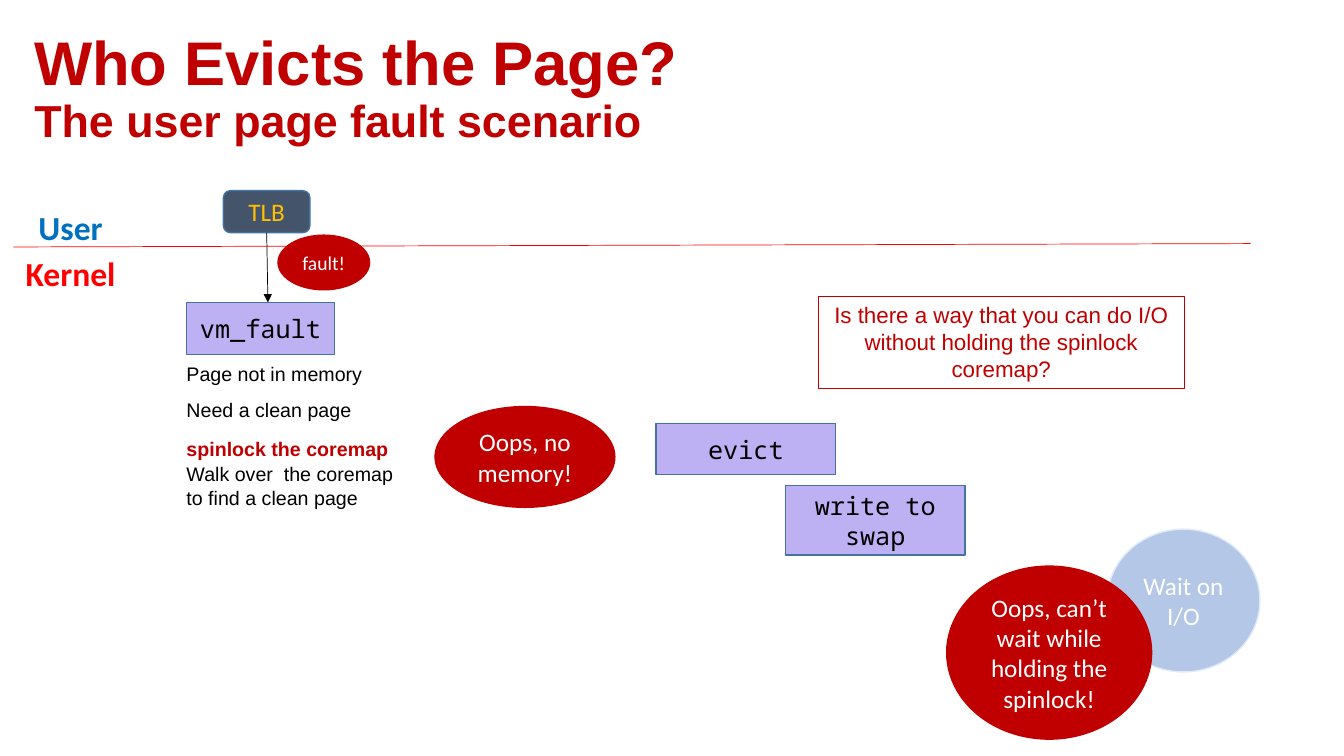
from dataclasses import dataclass, replace
from typing import Optional

from lxml.etree import SubElement
from pptx import Presentation
from pptx.dml.color import RGBColor
from pptx.enum.shapes import MSO_CONNECTOR, MSO_SHAPE
from pptx.enum.text import MSO_ANCHOR, PP_ALIGN
from pptx.oxml.ns import qn
from pptx.util import Emu, Inches, Pt

# Grid: 160 columns by 90 rows of square cells, 12 to the inch
COLS, ROWS, CELL = 160, 90, 76200

INK = {
    "red": "C00000", "bright": "FF0000", "blue": "0070C0", "black": "000000",
    "white": "FFFFFF", "lilac": "BEB1F3", "edge": "43739E", "slate": "44546A",
    "gold": "FFC000", "sky": "B4C7E7", "pale": "DEEBF7",
}


@dataclass(frozen=True)
class Look:
    font: str
    size: float
    color: str
    bold: bool = False
    form: Optional[MSO_SHAPE] = None
    fill: Optional[str] = None
    line: Optional[str] = None
    width: float = 1
    inset: float = 0.1
    align: PP_ALIGN = PP_ALIGN.CENTER
    anchor: MSO_ANCHOR = MSO_ANCHOR.MIDDLE


@dataclass(frozen=True)
class Box:
    text: str
    col: float
    row: float
    wide: float
    high: float
    look: Look


HEAD = Look("Arial", 44, "red", True, align=PP_ALIGN.LEFT)
MODE = Look("Calibri", 24, "blue", True, anchor=MSO_ANCHOR.TOP)
NOTE = Look("Arial", 14, "black", inset=0, align=PP_ALIGN.LEFT, anchor=MSO_ANCHOR.TOP)
ASK = Look("Arial", 16, "red", form=MSO_SHAPE.RECTANGLE, line="red", width=0.75,
           inset=0, anchor=MSO_ANCHOR.TOP)
CODE = Look("Noto Sans Mono", 18, "black", form=MSO_SHAPE.RECTANGLE,
            fill="lilac", line="edge")
OOPS = Look("Calibri", 18, "white", form=MSO_SHAPE.OVAL, fill="red", line="red")
WAIT = replace(OOPS, fill="sky", line="pale")
CHIP = replace(OOPS, color="gold", form=MSO_SHAPE.ROUNDED_RECTANGLE,
               fill="slate", line="edge")

TITLE = Box("Who Evicts the Page?", 2.9, 2, 157.1, 17.4, HEAD)
TLB = Box("TLB", 26.6, 22.7, 10.3, 5, CHIP)
LEFT = 22.2  # left edge of the page fault column

BOXES = [
    # User and kernel sides
    Box("User", 1.6, 24.1, 13.6, 6, MODE),
    Box("Kernel", 1.6, 29.5, 13.6, 6, replace(MODE, color="bright")),
    # Page fault steps
    Box("fault!", 33.1, 28, 10.9, 6.5, replace(OOPS, size=14)),
    Box("vm_fault", LEFT, 36, 17.6, 6.2, CODE),
    Box("Page not in memory", LEFT, 42.5, 22, 4.1, NOTE),
    Box("Need a clean page", LEFT, 46.8, 26.4, 4.1, NOTE),
    Box("Walk over  the coremap to find a clean page", LEFT, 54.4, 26.4, 6.8, NOTE),
    Box("spinlock the coremap", LEFT, 51.4, 26.4, 4.1,
        replace(NOTE, color="red", bold=True)),
    # Eviction and waiting
    Box("Oops, no memory!", 51.8, 48.4, 21.4, 12, OOPS),
    Box("evict", 78.1, 50.4, 21.4, 6.1, CODE),
    Box("write to swap", 93.5, 57.8, 21.4, 8.3, CODE),
    Box("Wait on I/O", 131.8, 63, 18.2, 17, WAIT),
    Box("Oops, can’t wait while holding the spinlock!", 112.7, 67.4, 24.4, 20.6, OOPS),
    Box("Is there a way that you can do I/O without holding the spinlock coremap?",
        97.4, 35.3, 43.6, 10.9, ASK),
]


def cells(count: float) -> Emu:
    return Emu(round(count * CELL))


def tint(name: str) -> RGBColor:
    return RGBColor.from_string(INK[name])


def draw(slide, box: Box):
    """Draw a box and its text."""
    look = box.look
    place = [cells(n) for n in (box.col, box.row, box.wide, box.high)]
    if look.form is None:
        shape = slide.shapes.add_textbox(*place)
    else:
        shape = slide.shapes.add_shape(look.form, *place)
        shape.shadow.inherit = False
        shape.line.color.rgb = tint(look.line)
        shape.line.width = Pt(look.width)
        if look.fill:
            shape.fill.solid()
            shape.fill.fore_color.rgb = tint(look.fill)
        else:
            shape.fill.background()
    frame = shape.text_frame
    frame.word_wrap = True
    frame.vertical_anchor = look.anchor
    frame.margin_left = frame.margin_right = Inches(look.inset)
    para = frame.paragraphs[0]
    para.text = box.text
    para.alignment = look.align
    font = para.font
    font.name, font.size, font.bold = look.font, Pt(look.size), look.bold
    font.color.rgb = tint(look.color)
    return shape


def link(slide, col: float, row: float, to_col: float, to_row: float, color: str):
    """Draw a thin straight line."""
    line = slide.shapes.add_connector(
        MSO_CONNECTOR.STRAIGHT, *[cells(n) for n in (col, row, to_col, to_row)])
    line.line.color.rgb = tint(color)
    line.line.width = Pt(0.5)
    SubElement(line.element.spPr, qn("a:effectLst"))
    return line


def main() -> None:
    deck = Presentation()
    deck.slide_width, deck.slide_height = cells(COLS), cells(ROWS)
    slide = deck.slides.add_slide(deck.slide_layouts[6])

    # Title with a smaller second line
    para = draw(slide, TITLE).text_frame.paragraphs[0]
    para.line_spacing = 0.9
    para.add_line_break()
    run = para.add_run()
    run.text = "The user page fault scenario"
    run.font.size = Pt(32)

    # Border between user and kernel
    link(slide, 1.6, 29.4, 148.9, 29, "bright")

    # Arrow from the TLB down to the fault handler
    chip = draw(slide, TLB)
    arrow = link(slide, 31.8, 28, 31.9, 36, "black")
    arrow.begin_connect(chip, 2)
    SubElement(arrow.line._get_or_add_ln(), qn("a:tailEnd"), type="triangle")

    for box in BOXES:
        draw(slide, box)
    deck.save("out.pptx")


if __name__ == "__main__":
    main()
